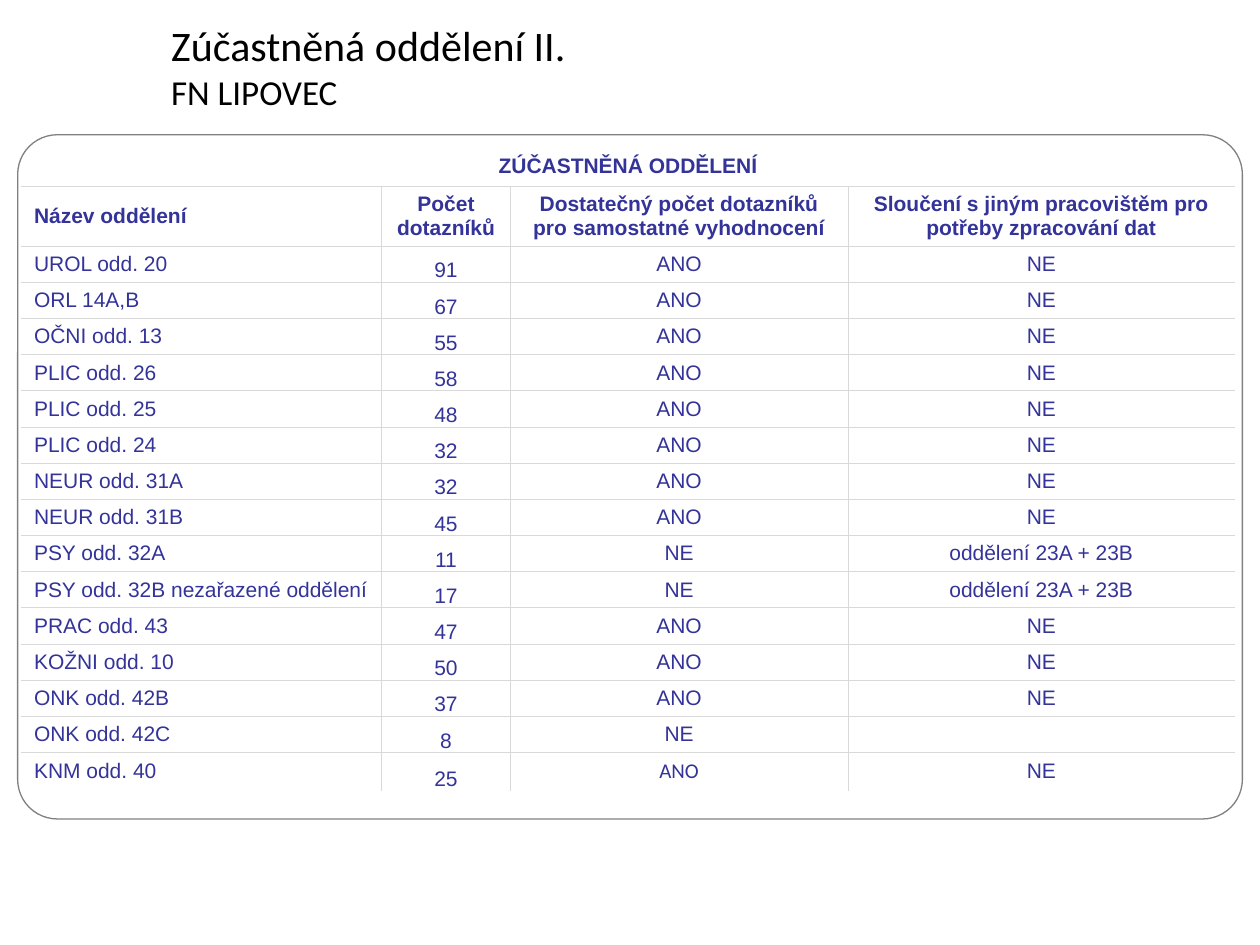
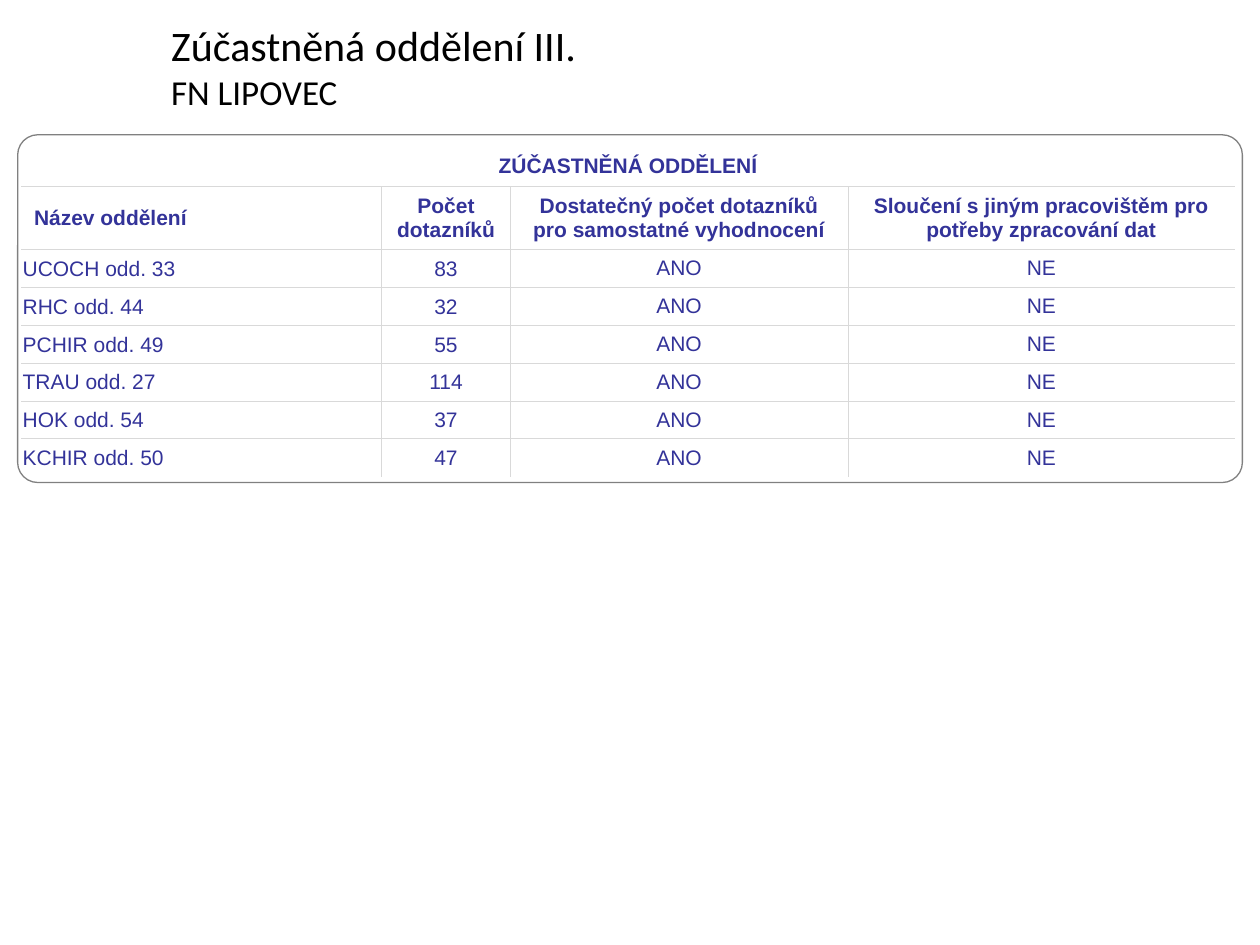
from lxml.etree import SubElement
from pptx import Presentation
from pptx.dml.color import RGBColor
from pptx.enum.shapes import MSO_SHAPE as SHAPE
from pptx.enum.text import MSO_ANCHOR as ANCHOR, PP_ALIGN as ALIGN
from pptx.oxml.ns import qn
from pptx.util import Inches, Pt

INK, TEXT, GRID, FRAME, WHITE = "000000", "333399", "D9D9D9", "808080", "FFFFFF"
COLS = [2.86, 1.02, 2.68, 3.07]
HEADS = ["Název oddělení", "Počet dotazníků",
         "Dostatečný počet dotazníků pro samostatné vyhodnocení",
         "Sloučení s jiným pracovištěm pro potřeby zpracování dat"]
HOSPITAL = "FN LIPOVEC"
NO_STYLE = "{2D5ABB26-0587-4C30-8999-92F81FD0307C}"
MERGED = "oddělení 23A + 23B"

pages = [
    ("Zúčastněná oddělení II.", 5.13, 5.43, {1}, ANCHOR.BOTTOM, [
        ("UROL odd. 20", 91, "ANO", "NE"),
        ("ORL 14A,B", 67, "ANO", "NE"),
        ("OČNI odd. 13", 55, "ANO", "NE"),
        ("PLIC odd. 26", 58, "ANO", "NE"),
        ("PLIC odd. 25", 48, "ANO", "NE"),
        ("PLIC odd. 24", 32, "ANO", "NE"),
        ("NEUR odd. 31A", 32, "ANO", "NE"),
        ("NEUR odd. 31B", 45, "ANO", "NE"),
        ("PSY odd. 32A", 11, "NE", MERGED),
        ("PSY odd. 32B nezařazené oddělení", 17, "NE", MERGED),
        ("PRAC odd. 43", 47, "ANO", "NE"),
        ("KOŽNI odd. 10", 50, "ANO", "NE"),
        ("ONK odd. 42B", 37, "ANO", "NE"),
        ("ONK odd. 42C", 8, "NE", ""),
        ("KNM odd. 40", 25, "ANO", "NE")]),
    ("Zúčastněná oddělení III.", 2.53, 2.76, {0, 1}, ANCHOR.MIDDLE, [
        ("UCOCH odd. 33", 83, "ANO", "NE"),
        ("RHC odd. 44", 32, "ANO", "NE"),
        ("PCHIR odd. 49", 55, "ANO", "NE"),
        ("TRAU odd. 27", 114, "ANO", "NE"),
        ("HOK odd. 54", 37, "ANO", "NE"),
        ("KCHIR odd. 50", 47, "ANO", "NE")]),
]


def rgb(code):
    return RGBColor.from_string(code)


def add_run(p, text, size, font, color, bold=False):
    r = p.add_run()
    r.text = text
    r.font.size, r.font.name, r.font.bold = Pt(size), font, bold
    r.font.color.rgb = rgb(color)


prs = Presentation()
prs.slide_width, prs.slide_height = Inches(10), Inches(7.5)

for title, table_h, frame_h, tight_cols, count_anchor, data in pages:
    s = prs.slides.add_slide(prs.slide_layouts[6])

    rows = [("ZÚČASTNĚNÁ ODDĚLENÍ", "", "", ""), HEADS, *data]
    last = len(rows) - 1
    gf = s.shapes.add_table(len(rows), len(COLS), Inches(0.17), Inches(1.15),
                            Inches(sum(COLS)), Inches(table_h))
    tbl = gf.table
    tbl.first_row = tbl.horz_banding = False
    gf._element.find(".//" + qn("a:tableStyleId")).text = NO_STYLE
    for col, w in zip(tbl.columns, COLS):
        col.width = Inches(w)
    for i, row in enumerate(tbl.rows):
        row.height = Inches(0.2 if i else 0.33)
    gf.height = Inches(table_h)
    tbl.cell(0, 0).merge(tbl.cell(0, 3))

    for i, row in enumerate(rows):
        for j, value in enumerate(row):
            cell = tbl.cell(i, j)
            cell.vertical_anchor = ANCHOR.MIDDLE
            if i > 1 and j in tight_cols:
                cell.margin_left = cell.margin_right = cell.margin_top = Inches(0.01)
                cell.margin_bottom = 0
                if j == 1:
                    cell.vertical_anchor = count_anchor
            edges = [("L", i and j), ("R", i and j < 3), ("T", i), ("B", i < last)]
            for side, shown in edges:
                if shown:
                    ln = SubElement(cell._tc.get_or_add_tcPr(), qn("a:ln" + side), w=str(Pt(0.5)))
                    SubElement(SubElement(ln, qn("a:solidFill")), qn("a:srgbClr"), val=GRID)
            if i:
                cell.fill.solid()
                cell.fill.fore_color.rgb = rgb(WHITE)
            p = cell.text_frame.paragraphs[0]
            p.alignment = ALIGN.LEFT if i and j == 0 else ALIGN.CENTER
            if value == "":
                end = SubElement(p._p, qn("a:endParaRPr"), sz="1200")
                SubElement(end, qn("a:latin"), typeface="Arial")
            else:
                font = "Calibri" if row[0] == "KNM odd. 40" and j == 2 else "Arial"
                add_run(p, str(value), 12, font, TEXT, i < 2)

    tf = s.shapes.add_textbox(Inches(1.26), Inches(0.14), Inches(8.74), Inches(0.77)).text_frame
    tf.word_wrap = True
    tf.vertical_anchor = ANCHOR.MIDDLE
    p = tf.paragraphs[0]
    add_run(p, title, 24, "Calibri", INK)
    p.add_line_break()
    add_run(p, HOSPITAL, 20, "Calibri", INK)

    sp = s.shapes.add_shape(SHAPE.ROUNDED_RECTANGLE, Inches(0.14), Inches(1.07),
                            Inches(9.72), Inches(frame_h))
    sp.adjustments[0] = 0.058
    sp.shadow.inherit = False
    sp.fill.background()
    sp.line.color.rgb = rgb(FRAME)
    sp.line.width = Pt(0.75)

prs.save("out.pptx")
